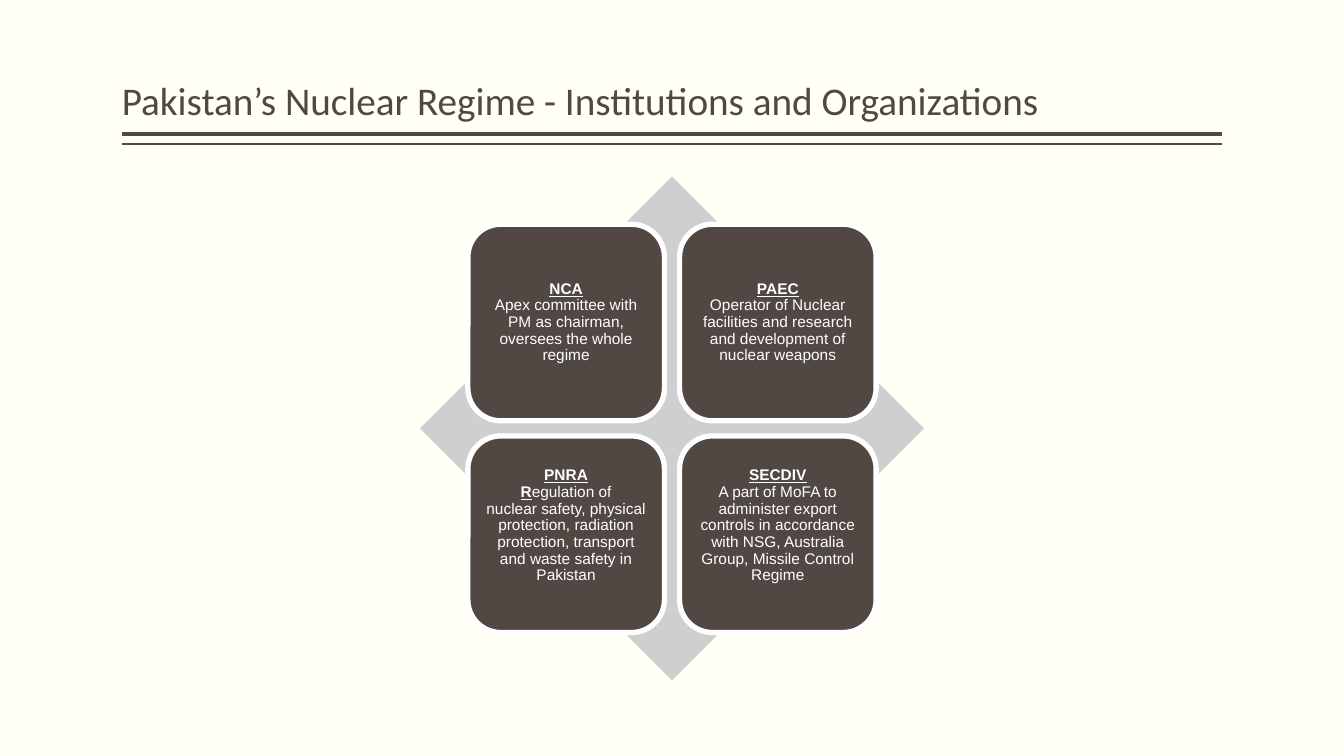
from pptx import Presentation
from pptx.dml.color import RGBColor
from pptx.enum.shapes import MSO_CONNECTOR, MSO_SHAPE
from pptx.enum.text import MSO_ANCHOR, PP_ALIGN
from pptx.oxml.ns import qn
from pptx.util import Pt
from lxml.etree import SubElement

# Content: emphasised lines, plain lines, lines of room kept below the text
TITLE = "Pakistan’s Nuclear Regime - Institutions and Organizations"
INSTITUTIONS = [
    (["NCA", ""],
     ["Apex committee with PM as chairman, oversees the whole regime"], 0),
    (["PAEC", ""],
     ["Operator of Nuclear facilities and research and development of nuclear weapons"], 0),
    (["PNRA", "R"],
     ["egulation of",
      "nuclear safety, physical protection, radiation protection, transport",
      "and waste safety in Pakistan"], 1),
    (["SECDIV", ""],
     ["A part of MoFA to administer export controls in accordance with NSG, "
      "Australia Group, Missile Control Regime"], 1),
]

THEME = {
    "background": RGBColor(0xFF, 0xFF, 0xF3),
    "dark": RGBColor(0x51, 0x48, 0x43),
    "diamond": RGBColor(0xD0, 0xCF, 0xCF),
    "light": RGBColor(0xFF, 0xFF, 0xFF),
    "title_font": "Calibri", "title_size": 28,
    "card_font": "Arial", "card_size": 11,
}

# Layout in points
WIDTH, HEIGHT = 960, 540
MARGIN = 87
TITLE_TOP, TITLE_HEIGHT = 5.76, 86.4
RULES = [(95.8, 3), (102.8, 1)]
CENTER_X, CENTER_Y = WIDTH / 2, 306
DIAMOND = 360
CARD, GAP = 140.4, 10.8
INSET, CARD_LINE, BLANK_LINE = 3.6, 3.78, 11.9


def style_paragraph(para, font, size, color):
    para.line_spacing = 0.9
    para.font.name = font
    para.font.size = Pt(size)
    para.font.color.rgb = color


def add_lines(para, lines, emphasis):
    for index, line in enumerate(lines):
        if index:
            para.add_line_break()
        if line:
            span = para.add_run()
            span.text = line
            span.font.bold = span.font.underline = emphasis


def set_insets(frame, side, top, bottom):
    frame.margin_left = frame.margin_right = Pt(side)
    frame.margin_top, frame.margin_bottom = Pt(top), Pt(bottom)
    frame.word_wrap = True


def add_block(page, kind, left, top, size, fill):
    block = page.shapes.add_shape(kind, Pt(left), Pt(top), Pt(size), Pt(size))
    block.shadow.inherit = False
    block.fill.solid()
    block.fill.fore_color.rgb = fill
    block.line.fill.background()
    return block


def add_card(page, index, emphasised, plain, spare_lines):
    row, column = divmod(index, 2)
    start = CARD + GAP / 2
    card = add_block(page, MSO_SHAPE.ROUNDED_RECTANGLE,
                     CENTER_X - start + column * (CARD + GAP),
                     CENTER_Y - start + row * (CARD + GAP), CARD, THEME["dark"])
    card.line.color.rgb = THEME["light"]
    card.line.width = Pt(CARD_LINE)
    frame = card.text_frame
    set_insets(frame, INSET, INSET, INSET + spare_lines * BLANK_LINE)
    frame.vertical_anchor = MSO_ANCHOR.MIDDLE
    para = frame.paragraphs[0]
    para.alignment = PP_ALIGN.CENTER
    style_paragraph(para, THEME["card_font"], THEME["card_size"], THEME["light"])
    add_lines(para, emphasised, True)
    add_lines(para, plain, False)


def main():
    deck = Presentation()
    deck.slide_width, deck.slide_height = Pt(WIDTH), Pt(HEIGHT)
    page = deck.slides.add_slide(deck.slide_layouts[6])
    page.background.fill.solid()
    page.background.fill.fore_color.rgb = THEME["background"]

    # Double rule under the title
    for y, weight in RULES:
        rule = page.shapes.add_connector(
            MSO_CONNECTOR.STRAIGHT, Pt(WIDTH - MARGIN), Pt(y), Pt(MARGIN), Pt(y))
        rule.line.color.rgb = THEME["dark"]
        rule.line.width = Pt(weight)
        SubElement(rule.element.spPr, qn("a:effectLst"))

    # Title
    box = page.shapes.add_textbox(Pt(MARGIN), Pt(TITLE_TOP),
                                  Pt(WIDTH - 2 * MARGIN), Pt(TITLE_HEIGHT))
    set_insets(box.text_frame, 0, INSET, INSET)
    box.text_frame.vertical_anchor = MSO_ANCHOR.BOTTOM
    para = box.text_frame.paragraphs[0]
    para.text = TITLE
    style_paragraph(para, THEME["title_font"], THEME["title_size"], THEME["dark"])

    # Diamond with the four institutions
    add_block(page, MSO_SHAPE.DIAMOND, CENTER_X - DIAMOND / 2,
              CENTER_Y - DIAMOND / 2, DIAMOND, THEME["diamond"])
    for index, institution in enumerate(INSTITUTIONS):
        add_card(page, index, *institution)

    deck.save("out.pptx")


if __name__ == "__main__":
    main()
